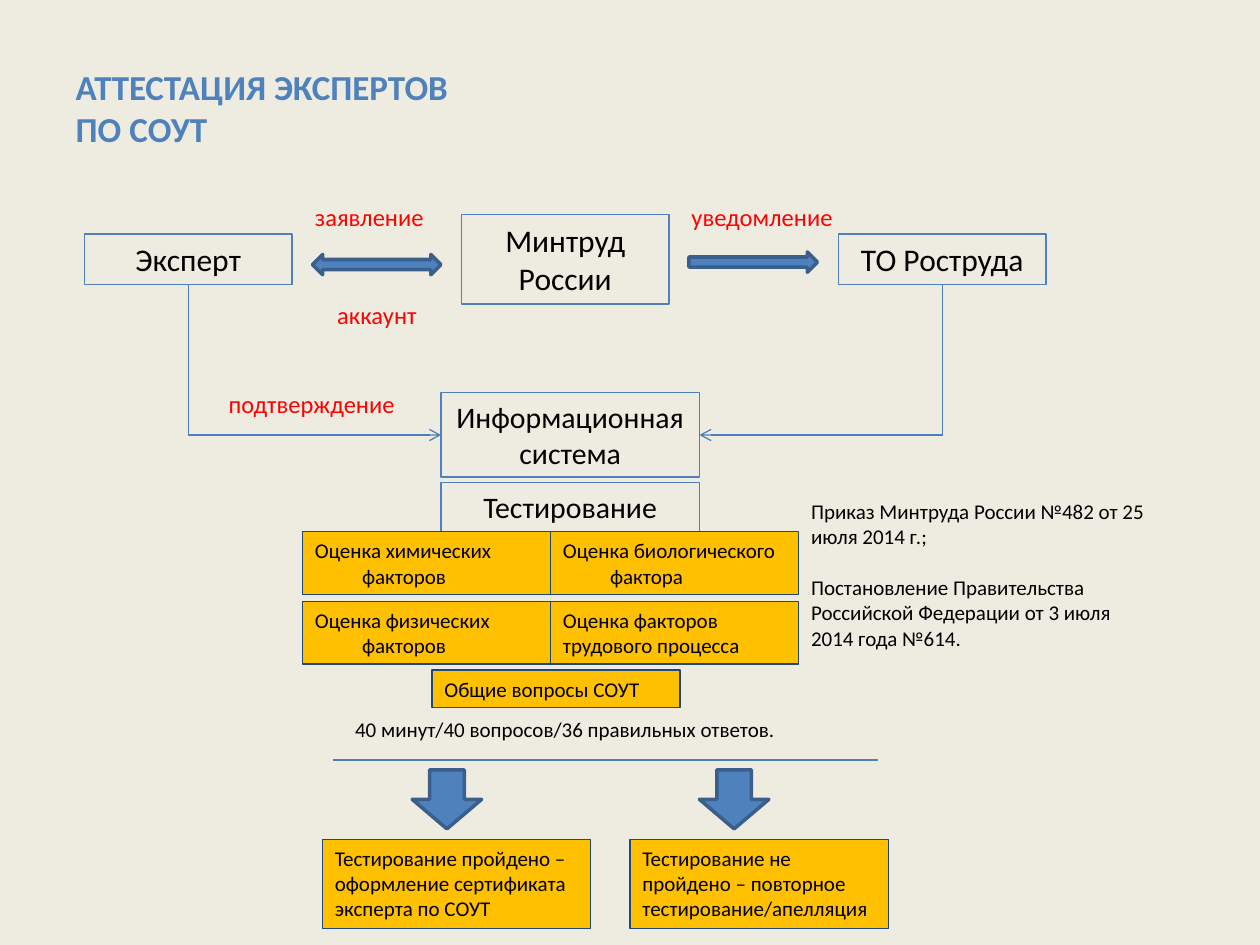
from lxml.etree import SubElement
from pptx import Presentation
from pptx.dml.color import RGBColor
from pptx.enum.shapes import MSO_CONNECTOR, MSO_SHAPE
from pptx.enum.text import MSO_ANCHOR, MSO_AUTO_SIZE, PP_ALIGN
from pptx.oxml.ns import qn
from pptx.util import Cm, Pt


class Theme:
    font = "Calibri"
    background, accent, accent_dark = "EEECE1", "4F81BD", "3A5F8C"
    connector, amber, navy = "4B7EBC", "FFC000", "1F497D"
    black, red = "000000", "FF0000"
    title, party, system, label, body = 20, 18, 17, 14, 12
    thin, thick = 0.75, 2


# Content; positions are left, top, width, height in cm
TITLE = "АТТЕСТАЦИЯ ЭКСПЕРТОВ ПО СОУТ"
PARTIES = [("Эксперт", 1.02), ("Минтруд России", 1.8), ("ТО Роструда", 1.02)]
LABELS = [
    ("заявление", (6.1, 3.94, 3, 0.86), PP_ALIGN.LEFT),
    ("аккаунт", (6.1, 5.92, 3, 0.86), PP_ALIGN.CENTER),
    ("уведомление", (13.69, 3.94, 3.4, 0.86), PP_ALIGN.LEFT),
    ("подтверждение", (4.29, 7.72, 3.99, 0.86), PP_ALIGN.CENTER),
]
SYSTEM = [("Информационная система", 7.92, 1.7), ("Тестирование", 9.73, 0.99)]
TOPICS = [  # text, hanging indent
    [("Оценка химических факторов", 0.95), ("Оценка биологического фактора", 0.95)],
    [("Оценка физических факторов", 0.95), ("Оценка факторов трудового процесса", 0)],
]
GENERAL_TOPIC = "Общие вопросы СОУТ"
PASS_RULE = "40 минут/40 вопросов/36 правильных ответов."
REGULATIONS = [
    "Приказ Минтруда России №482 от 25 июля 2014 г.;",
    "Постановление Правительства Российской Федерации от 3 июля 2014 года №614.",
]
RESULTS = [
    ("Тестирование пройдено – оформление сертификата эксперта по СОУТ", 6.5, 5.41),
    ("Тестирование не пройдено – повторное тестирование/апелляция", 12.7, 5.21),
]
ARROWS = [
    (MSO_SHAPE.LEFT_RIGHT_ARROW, (6.3, 5.13, 2.59, 0.41)),
    (MSO_SHAPE.RIGHT_ARROW, (13.89, 5.08, 2.59, 0.41)),
    (MSO_SHAPE.DOWN_ARROW, (8.31, 15.52, 1.4, 1.19)),
    (MSO_SHAPE.DOWN_ARROW, (14.1, 15.52, 1.4, 1.19)),
]

prs = Presentation()
prs.slide_width, prs.slide_height = Cm(25.4), Cm(19.05)
slide = prs.slides.add_slide(prs.slide_layouts[5])


def rgb(code):
    return RGBColor.from_string(code)


def write(holder, text, size=Theme.body, color=Theme.black, bold=False,
          align=PP_ALIGN.LEFT, anchor=MSO_ANCHOR.TOP, hanging=0, gap=0,
          fit=MSO_AUTO_SIZE.SHAPE_TO_FIT_TEXT):
    """Put one text or a list of paragraphs into a shape."""
    frame = holder.text_frame
    frame.word_wrap, frame.auto_size, frame.vertical_anchor = True, fit, anchor
    for index, line in enumerate([text] if isinstance(text, str) else text):
        paragraph = frame.add_paragraph() if index else frame.paragraphs[0]
        paragraph.alignment = align
        if index and gap:
            paragraph.space_before = Pt(gap)
        if hanging:
            properties = paragraph._p.get_or_add_pPr()
            properties.set("marL", str(Cm(hanging)))
            properties.set("indent", str(-Cm(hanging)))
        run = paragraph.add_run()
        run.text = line
        run.font.name, run.font.size, run.font.bold = Theme.font, Pt(size), bold
        run.font.color.rgb = rgb(color)


def add_block(place, kind=MSO_SHAPE.RECTANGLE, fill=None, line=Theme.accent,
              weight=Theme.thin):
    block = slide.shapes.add_shape(kind, *map(Cm, place))
    block.shadow.inherit = False
    if fill:
        block.fill.solid()
        block.fill.fore_color.rgb = rgb(fill)
    else:
        block.fill.background()
    block.line.color.rgb, block.line.width = rgb(line), Pt(weight)
    return block


def add_amber(text, place, hanging=0):
    write(add_block(place, fill=Theme.amber, line=Theme.navy), text, hanging=hanging)


def add_note(text, place, **style):
    write(slide.shapes.add_textbox(*map(Cm, place)), text, **style)


def add_line(kind, start, end):
    line = slide.shapes.add_connector(kind, *start, *end)
    line.line.color.rgb, line.line.width = rgb(Theme.connector), Pt(Theme.thin)
    SubElement(line._element.spPr, qn("a:effectLst"))
    return line


def add_elbow(party, system, side):
    """Run down from a party, then sideways into a side of the system box."""
    x1, y1 = party.left + party.width // 2, party.top + party.height
    x2 = system.left if side == 1 else system.left + system.width
    y2 = system.top + system.height // 2
    elbow = add_line(MSO_CONNECTOR.ELBOW, (x1, y1), (x2, y2))
    elbow.begin_connect(party, 2)
    elbow.end_connect(system, side)
    # A one-bend connector is stored turned by a quarter about its centre
    width, height = abs(y2 - y1), abs(x2 - x1)
    elbow.left, elbow.top = (x1 + x2 - width) // 2, (y1 + y2 - height) // 2
    elbow.width, elbow.height = width, height
    properties = elbow._element.spPr
    properties.find(qn("a:prstGeom")).set("prst", "bentConnector2")
    frame = properties.find(qn("a:xfrm"))
    frame.set("rot", "16200000" if side == 1 else "5400000")
    frame.set("flipH", "1" if side == 1 else "0")
    SubElement(properties.find(qn("a:ln")), qn("a:tailEnd"), type="arrow")


# Background and title
slide.background.fill.solid()
slide.background.fill.fore_color.rgb = rgb(Theme.background)
title = slide.shapes.title
title.left, title.top, title.width, title.height = map(Cm, (1.27, 0.76, 8.36, 3.23))
write(title, TITLE, size=Theme.title, color=Theme.accent, bold=True,
      anchor=MSO_ANCHOR.BOTTOM, fit=MSO_AUTO_SIZE.NONE)
title.text_frame.margin_bottom = Cm(0.98)

# Parties, centred on one row
parties = []
for column, (name, height) in enumerate(PARTIES):
    party = add_block((1.7 + 7.6 * column, 5.23 - height / 2, 4.19, height))
    write(party, name, size=Theme.party, align=PP_ALIGN.CENTER)
    parties.append(party)

# Information system and testing
stages = []
for name, top, height in SYSTEM:
    stage = add_block((8.89, top, 5.21, height))
    write(stage, name, size=Theme.system, align=PP_ALIGN.CENTER)
    stages.append(stage)
add_elbow(parties[0], stages[0], 1)
add_elbow(parties[2], stages[0], 3)

# Labels of the exchanges
for text, place, align in LABELS:
    add_note(text, place, size=Theme.label, color=Theme.red, align=align)

# Test topics
for row, topics in enumerate(TOPICS):
    for column, (topic, hanging) in enumerate(topics):
        add_amber(topic, (6.1 + 5 * column, 10.72 + 1.4 * row, 5, 1.27), hanging)
add_amber(GENERAL_TOPIC, (8.71, 13.51, 5, 0.76), 0.95)

# Regulations and pass rule
add_note(REGULATIONS, (16.1, 9.93, 7.39, 4.11), gap=14.6)
add_note(PASS_RULE, (6.91, 14.33, 9.19, 0.76))

# Results
add_line(MSO_CONNECTOR.STRAIGHT, (Cm(6.71), Cm(15.32)), (Cm(17.7), Cm(15.32)))
for text, left, width in RESULTS:
    add_amber(text, (left, 16.92, width, 1.8))

# Block arrows
for kind, place in ARROWS:
    add_block(place, kind, Theme.accent, Theme.accent_dark, Theme.thick)

prs.save("out.pptx")
